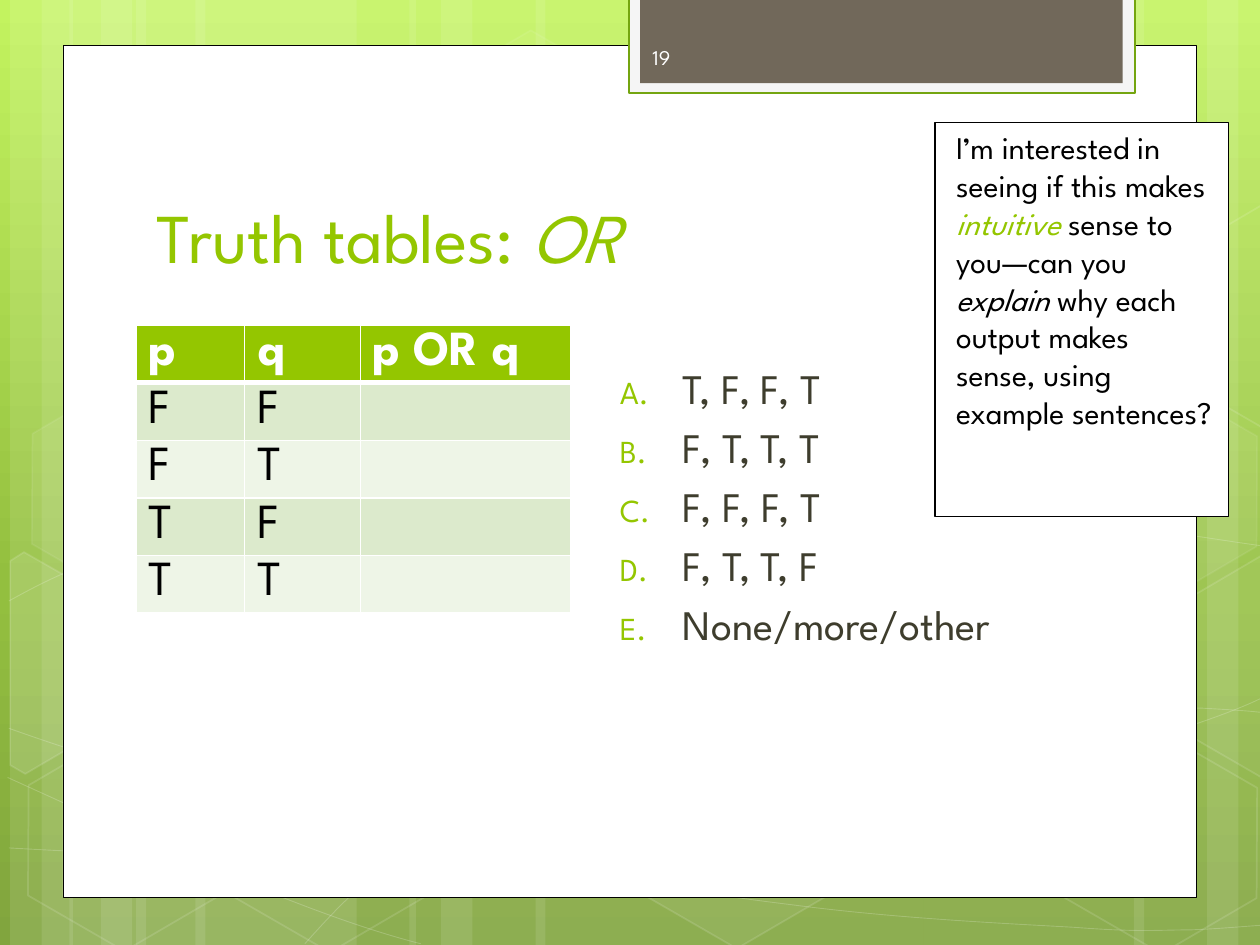
from copy import deepcopy
from dataclasses import dataclass
from math import cos, radians, sin

from lxml.etree import SubElement
from pptx import Presentation
from pptx.dml.color import RGBColor
from pptx.enum.shapes import MSO_SHAPE as Shape
from pptx.enum.text import MSO_ANCHOR as Anchor, MSO_AUTO_SIZE as AutoSize, PP_ALIGN as Align
from pptx.oxml.ns import qn
from pptx.util import Inches, Pt

@dataclass(frozen=True)
class Theme:
    font: str = "League Spartan"
    green: str = "94C600"
    border_green: str = "74A510"
    olive: str = "3E3D2D"
    white: str = "FFFFFF"
    black: str = "000000"
    brown: str = "71685A"
    pale: str = "F5F5F5"
    number: str = "FEFEFE"
    bands: tuple = ("DCEACC", "EEF5E7")
    sky: tuple = ((0, "C3F35F"), (0.62, "93BF3F"), (1, "81A53E"))
    title_size: int = 40
    table_size: int = 28
    body_size: int = 24
    note_size: int = 18
    number_size: int = 12

THEME = Theme()
STRIPES = [(1.08, 1.75), (0.08, 0.5), (0.33, 0.83), (1.55, 1.75), (0.55, 0.5), (0.8, 0.83),
           (7.33, 1.75), (9.58, 0.5), (9, 0.83), (4.25, 3.08), (3.25, 0.5), (3.5, 0.83)]
WAVES = [
    [(0.07, 6.73), (0.61, 6.76), (1.15, 6.79), (1.9, 6.78), (2.65, 6.77), (3.58, 6.75), (4.58, 6.65),
     (5.58, 6.55), (7, 6.36), (7.92, 6.17), (8.83, 5.98), (9.77, 5.68), (10.07, 5.51)],
    [(0.07, 4.77), (0.36, 4.61), (0.65, 4.46), (1.21, 4.31), (1.78, 4.16), (2.59, 3.94), (3.47, 3.87),
     (4.36, 3.8), (5.44, 3.79), (6.54, 3.87), (7.64, 3.95), (9.47, 4.26), (10.07, 4.34)],
    [(0.06, 6.17), (1.27, 6.72), (2.47, 7.27), (3.34, 7.49)],
    [(0.07, 5.78), (0.38, 5.89), (0.7, 6), (1.28, 6.16), (1.86, 6.31), (2.73, 6.56), (3.57, 6.73),
     (4.4, 6.9), (5.45, 7.08), (6.28, 7.18), (7.11, 7.29), (8, 7.33), (8.53, 7.36),
     (9.05, 7.4), (9.19, 7.38), (9.45, 7.38), (9.71, 7.37), (9.89, 7.35), (10.07, 7.34)],
    [(2.42, 7.49), (2.6, 7.29), (2.78, 7.09), (3.02, 6.91), (3.26, 6.73), (3.6, 6.53), (3.88, 6.39),
     (4.16, 6.25), (4.33, 6.19), (4.7, 6.09), (5.06, 5.99), (5.73, 5.85), (6.08, 5.78),
     (6.44, 5.71), (6.49, 5.71), (6.8, 5.69), (7.11, 5.66), (7.6, 5.63), (7.94, 5.62),
     (8.29, 5.61), (8.86, 5.62), (8.86, 5.62), (8.86, 5.62), (9.53, 5.62), (9.53, 5.62),
     (9.71, 5.63), (9.88, 5.64), (9.97, 5.65), (10.06, 5.66), (10.03, 5.65), (10.06, 5.66)]]
HEXAGONS = [(3.34, 0.36, 4, 8), (4.97, 5.89, 6, 12), (0.11, 5.91, 0, 12), (0.14, 3.12, 7, 8),
            (1.74, 5.92, 0, 12), (7.53, 4.53, 10, 12), (8.34, 5.93, 0, 12), (8.34, 3.14, 7, 8)]
RIGHT_CUT = [(-0.59, -0.35), (0.16, -0.79), (0.24, -0.74), (0.24, 0.93), (0.17, 0.97), (-0.59, 0.53)]
LEFT_CUT = [(-0.28, -0.9), (-0.17, -0.97), (0.6, -0.53), (0.59, 0.35), (-0.16, 0.79), (-0.28, 0.72)]
CUT_HEXAGONS = [(0.36, 5.35, LEFT_CUT, 10), (9.85, 5.2, RIGHT_CUT, 4), (9.85, 2.42, RIGHT_CUT, 0)]

def rgb(value):
    return RGBColor.from_string(value)

def set_formats(target, **formats):
    for name, value in formats.items():
        setattr(target, name, value)

def paint(sp, fill=None, alpha=100, line=None, width=1, line_alpha=100):
    sp.shadow.inherit = False
    sp.line.width = Pt(width)
    for part, parent, color, opacity in ((sp.fill, sp._element.spPr, fill, alpha),
                                         (sp.line.fill, sp.line._ln, line, line_alpha)):
        if not color or not opacity:
            part.background()
            continue
        part.solid()
        part.fore_color.rgb = rgb(color)
        if opacity < 100:
            SubElement(parent.find(qn("a:solidFill"))[0], qn("a:alpha"), val=str(opacity * 1000))
    return sp

def add_box(s, box, kind=Shape.RECTANGLE, **look):
    return paint(s.shapes.add_shape(kind, *map(Inches, box)), **look)

def add_run(p, text, size, color, **formats):
    r = p.add_run()
    r.text = text
    r.font.color.rgb = rgb(color)
    set_formats(r.font, name=THEME.font, size=Pt(size), **formats)

def set_frame(tf, anchor=Anchor.TOP):
    set_formats(tf, word_wrap=True, auto_size=AutoSize.NONE, vertical_anchor=anchor)
    tf.paragraphs[0].alignment = Align.LEFT
    return tf

def place(s, sp, box):
    set_formats(sp, **dict(zip(("left", "top", "width", "height"), map(Inches, box))))
    s.shapes._spTree.append(sp._element)

def add_path(s, points, x, y, close):
    start, *rest = [(Inches(x + px), Inches(y + py)) for px, py in points]
    builder = s.shapes.build_freeform(*start)
    builder.add_line_segments(rest, close=close)
    return builder.convert_to_shape()

def add_wave(s, knots, x, y):
    sp = add_path(s, knots, x, y, False)
    path = sp._element.find(".//" + qn("a:path"))
    lines = path.findall(qn("a:lnTo"))
    for i in range(0, len(lines), 3):
        curve = SubElement(path, qn("a:cubicBezTo"))
        for line in lines[i:i + 3]:
            curve.append(line[0])
            path.remove(line)
    paint(sp, line=THEME.white, width=0.5, line_alpha=20)

def add_cut_hexagon(s, points, x, y, alpha):
    c, n = cos(radians(30)), sin(radians(30))
    sp = add_path(s, [(px * c + py * n, py * c - px * n) for px, py in points], x, y, True)
    sp.rotation = 30
    paint(sp, THEME.white, alpha, THEME.white, 1, 12)

def add_backdrop(s, box):
    left, top, _, height = box
    fill = s.background.fill
    fill.gradient()
    stops = s._element.find(".//" + qn("a:gsLst"))
    stops.append(deepcopy(stops[0]))
    for stop, (position, color) in zip(fill.gradient_stops, THEME.sky):
        stop.position = position
        stop.color.rgb = rgb(color)
    fill.gradient_angle = 270
    for x, w in STRIPES:
        add_box(s, (left + x, top, w, height), fill=THEME.white, alpha=10)
    for knots in WAVES:
        add_wave(s, knots, left, top)
    for x, y, alpha, line_alpha in HEXAGONS:
        sp = add_box(s, (left + x, top + y, 1.75, 1.52), Shape.HEXAGON, fill=THEME.white,
                     alpha=alpha, line=THEME.white, line_alpha=line_alpha)
        sp.adjustments[0] = 0.285
        sp.rotation = 30
    for x, y, points, alpha in CUT_HEXAGONS:
        add_cut_hexagon(s, points, left + x, top + y, alpha)

def add_number_tab(s, box, number):
    left, top, width, height = box
    add_box(s, box, fill=THEME.pale, line=THEME.border_green, width=1.25)
    add_box(s, (left + 0.09, top, width - 0.19, height - 0.08), fill=THEME.brown)
    number_box = s.shapes.add_textbox(*map(Inches, (left + 0.09, top + 0.27, 1.46, 0.4)))
    tf = set_frame(number_box.text_frame, Anchor.MIDDLE)
    add_run(tf.paragraphs[0], number, THEME.number_size, THEME.number)

def add_title(s, box):
    place(s, s.shapes.title, box)
    p = set_frame(s.shapes.title.text_frame, Anchor.BOTTOM).paragraphs[0]
    add_run(p, "Truth tables: ", THEME.title_size, THEME.green)
    add_run(p, "OR", THEME.title_size, THEME.green, italic=True)

def add_choices(s, box, choices):
    place(s, s.placeholders[1], box)
    tf = set_frame(s.placeholders[1].text_frame)
    for i, choice in enumerate(choices):
        p = tf.add_paragraph() if i else tf.paragraphs[0]
        p.space_before = Pt(4.8)
        pPr = p._p.get_or_add_pPr()
        pPr.set("marL", str(Inches(0.57)))
        pPr.set("indent", str(Inches(-0.5)))
        SubElement(SubElement(pPr, qn("a:buClr")), qn("a:srgbClr"), val=THEME.green)
        SubElement(pPr, qn("a:buSzPct"), val="76000")
        SubElement(pPr, qn("a:buFont"), typeface=THEME.font)
        SubElement(pPr, qn("a:buAutoNum"), type="alphaUcPeriod")
        add_run(p, choice, THEME.body_size, THEME.olive)

def add_truth_table(s, box, rows, widths):
    table = s.shapes.add_table(len(rows), len(widths), *map(Inches, box)).table
    for column, width in zip(table.columns, widths):
        column.width = Inches(width)
    for i, row in enumerate(rows):
        for j, text in enumerate(row):
            cell = table.cell(i, j)
            tcPr = cell._tc.get_or_add_tcPr()
            for side in "LRTB":
                thick = (i, side) in ((0, "B"), (1, "T"))
                ln = SubElement(tcPr, qn("a:ln" + side), w=str(Pt(3 if thick else 1)))
                SubElement(SubElement(ln, qn("a:solidFill")), qn("a:srgbClr"), val=THEME.white)
            cell.fill.solid()
            cell.fill.fore_color.rgb = rgb(THEME.bands[(i - 1) % 2] if i else THEME.green)
            if text:
                add_run(cell.text_frame.paragraphs[0], text, THEME.table_size,
                        THEME.black if i else THEME.white, bold=i == 0)

def add_note(s, box, parts):
    sp = add_box(s, box, fill=THEME.white, line=THEME.black, width=0.75)
    p = set_frame(sp.text_frame).paragraphs[0]
    p._p.get_or_add_pPr().set("marL", str(Inches(0.07)))
    for text, color, italic in parts:
        add_run(p, text, THEME.note_size, color, italic=italic)

prs = Presentation()
prs.slide_width, prs.slide_height = Inches(10), Inches(7.5)
s = prs.slides.add_slide(prs.slide_layouts[1])
add_backdrop(s, (0, 0, 10, 7.5))
add_box(s, (0.5, 0.36, 9, 6.76), fill=THEME.white, line=THEME.black, width=0.5)
add_number_tab(s, (4.99, -0.02, 4.02, 0.76), "19")
add_title(s, (1.14, 1, 7.68, 1.25))
add_choices(s, (4.75, 2.83, 4.33, 3.42), ["T, F, F, T", "F, T, T, T", "F, F, F, T", "F, T, T, F", "None/more/other"])
add_truth_table(s, (1.08, 2.58, 3.45, 2.05), [("p", "q", "p OR q"), *((p, q, "") for p in "FT" for q in "FT")],
                (0.86, 0.92, 1.67))
add_note(s, (7.42, 0.97, 2.33, 3.13), [
    ("I’m interested in seeing if this makes ", THEME.black, False), ("intuitive ", THEME.green, True),
    ("sense to you—can you ", THEME.black, False), ("explain ", THEME.black, True),
    ("why each output makes sense, using example sentences?", THEME.black, False)])
prs.save("out.pptx")
